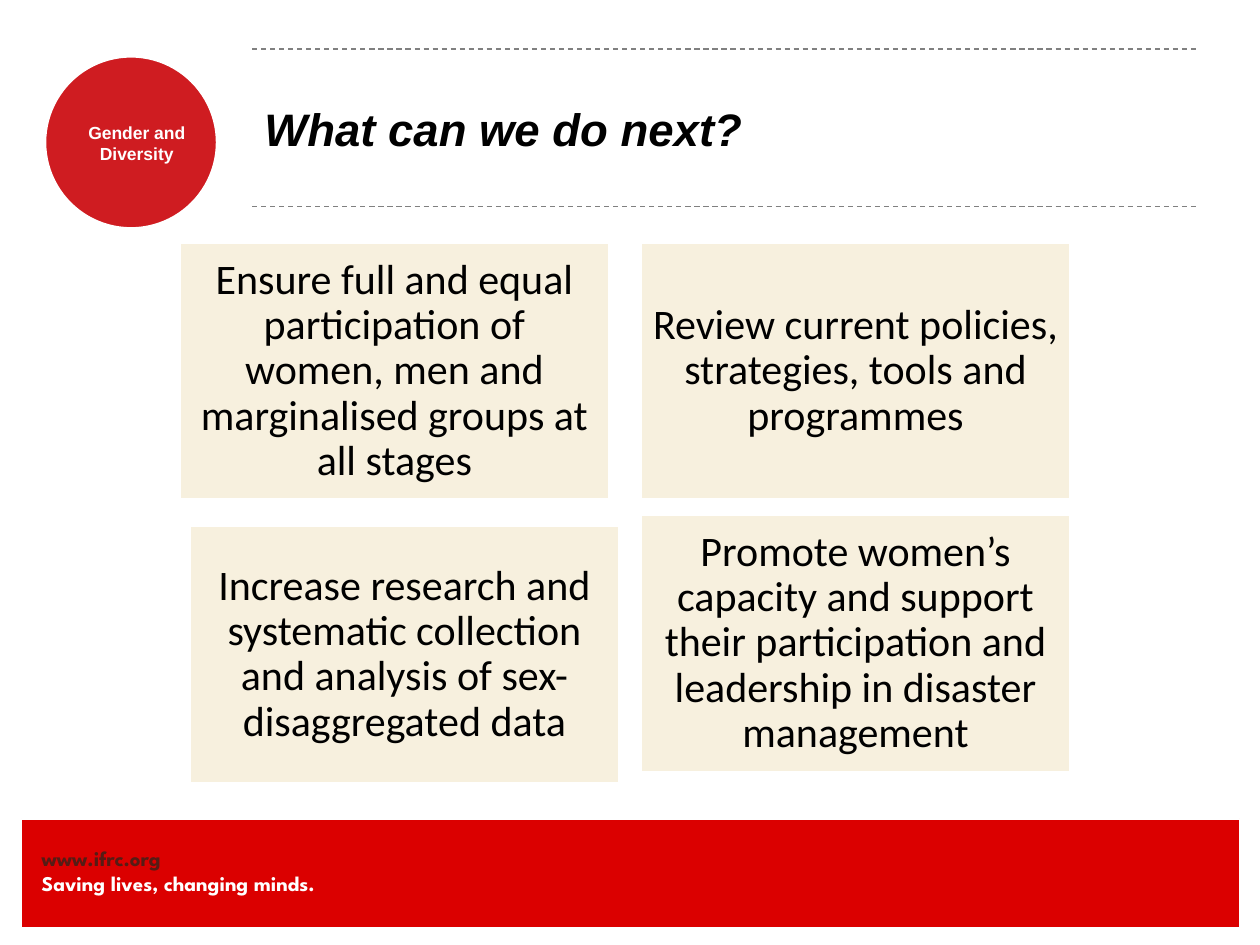
from dataclasses import dataclass

from lxml import etree
from pptx import Presentation
from pptx.dml.color import RGBColor
from pptx.enum import dml, shapes, text
from pptx.oxml import ns
from pptx.util import Inches, Pt


@dataclass(frozen=True)
class Theme:
    """Colours, fonts and type sizes of the slide."""
    white: RGBColor = RGBColor.from_string("FFFFFF")
    black: RGBColor = RGBColor.from_string("000000")
    footer: RGBColor = RGBColor.from_string("DB0000")
    address: RGBColor = RGBColor.from_string("551C15")
    badge: RGBColor = RGBColor.from_string("CF1C21")
    rule: RGBColor = RGBColor.from_string("808080")
    card: RGBColor = RGBColor.from_string("F7F0DE")
    heading_font: str = "Arial"
    body_font: str = "Calibri"
    footer_font: str = "League Spartan"
    title_size: int = 26
    card_size: int = 24
    footer_size: int = 12
    badge_size: int = 10


THEME = Theme()
CARD_SIZE = (3.42, 2.05)
CARDS = [
    ((1.42, 1.92), "Ensure full and equal participation of women, men and marginalised groups at all stages"),
    ((5.08, 1.92), "Review current policies, strategies, tools and programmes"),
    ((1.5, 4.17), "Increase research and systematic collection and analysis of sex-disaggregated data"),
    ((5.08, 4.08), "Promote women’s capacity and support their participation and leadership in disaster management"),
]


def add_panel(slide, kind, box, fill, line_width):
    """Add a filled shape with a white outline."""
    shape = slide.shapes.add_shape(kind, *map(Inches, box))
    shape.shadow.inherit = False
    shape.fill.solid()
    shape.fill.fore_color.rgb = fill
    shape.line.color.rgb = THEME.white
    shape.line.width = Pt(line_width)
    return shape


def set_frame(shape, margins, anchor):
    """Give a text frame wrapping, margins and an anchor, and return it."""
    frame = shape.text_frame
    frame.word_wrap = True
    frame.margin_left = frame.margin_right = Inches(margins[0])
    frame.margin_top = frame.margin_bottom = Inches(margins[1])
    frame.vertical_anchor = anchor
    return frame


def write(paragraph, words, font, size, color, bold=False, italic=False, align=text.PP_ALIGN.LEFT):
    """Fill a paragraph with words in one style."""
    paragraph.text = words
    paragraph.alignment = align
    paragraph.font.name = font
    paragraph.font.size = Pt(size)
    paragraph.font.color.rgb = color
    paragraph.font.bold = bold
    paragraph.font.italic = italic


def add_footer(slide, box):
    """Draw the footer band with the web address and motto."""
    left, top = box[:2]
    add_panel(slide, shapes.MSO_SHAPE.RECTANGLE, box, THEME.footer, 0.75)
    label = slide.shapes.add_textbox(*map(Inches, (left + 0.16, top + 0.21, 3.42, 0.4)))
    frame = set_frame(label, (0, 0), text.MSO_ANCHOR.TOP)
    write(frame.paragraphs[0], "www.ifrc.org", THEME.footer_font, THEME.footer_size, THEME.address, bold=True)
    write(frame.add_paragraph(), "Saving lives, changing minds.", THEME.footer_font, THEME.footer_size,
          THEME.white, bold=True)


def add_badge(slide, box):
    """Draw the round topic badge with its label."""
    left, top = box[:2]
    add_panel(slide, shapes.MSO_SHAPE.OVAL, box, THEME.badge, 2.5)
    label = slide.shapes.add_textbox(*map(Inches, (left + 0.11, top + 0.53, 1.25, 0.34)))
    frame = set_frame(label, (0, 0), text.MSO_ANCHOR.TOP)
    write(frame.paragraphs[0], "Gender and Diversity", THEME.heading_font, THEME.badge_size, THEME.white,
          bold=True, align=text.PP_ALIGN.CENTER)


def add_title(slide, box):
    """Place the title between two dashed rules."""
    left, top, width, height = box
    for y in (top, top + height):
        rule = slide.shapes.add_connector(shapes.MSO_CONNECTOR.STRAIGHT,
                                          *map(Inches, (left, y, left + width, y)))
        rule.line.color.rgb = THEME.rule
        rule.line.width = Pt(0.75)
        rule.line.dash_style = dml.MSO_LINE.DASH
        etree.SubElement(rule._element.spPr, ns.qn("a:effectLst"))
    title = slide.shapes.add_textbox(*map(Inches, box))
    frame = set_frame(title, (0.1, 0.05), text.MSO_ANCHOR.MIDDLE)
    write(frame.paragraphs[0], "What can we do next?", THEME.heading_font, THEME.title_size, THEME.black,
          bold=True, italic=True)


def add_card(slide, box, words):
    """Draw one action card with centred text."""
    card = add_panel(slide, shapes.MSO_SHAPE.RECTANGLE, box, THEME.card, 2)
    frame = set_frame(card, (0.1, 0.1), text.MSO_ANCHOR.MIDDLE)
    paragraph = frame.paragraphs[0]
    write(paragraph, words, THEME.body_font, THEME.card_size, THEME.black, align=text.PP_ALIGN.CENTER)
    paragraph.line_spacing = 0.9


def main():
    """Build the slide and save it."""
    presentation = Presentation()
    presentation.slide_width, presentation.slide_height = Inches(10), Inches(7.5)
    slide = presentation.slides.add_slide(presentation.slide_layouts[6])
    add_footer(slide, (0.17, 6.5, 9.67, 0.86))
    add_badge(slide, (0.35, 0.44, 1.38, 1.38))
    add_title(slide, (2, 0.39, 7.5, 1.25))
    for position, words in CARDS:
        add_card(slide, position + CARD_SIZE, words)
    presentation.save("out.pptx")


if __name__ == "__main__":
    main()
